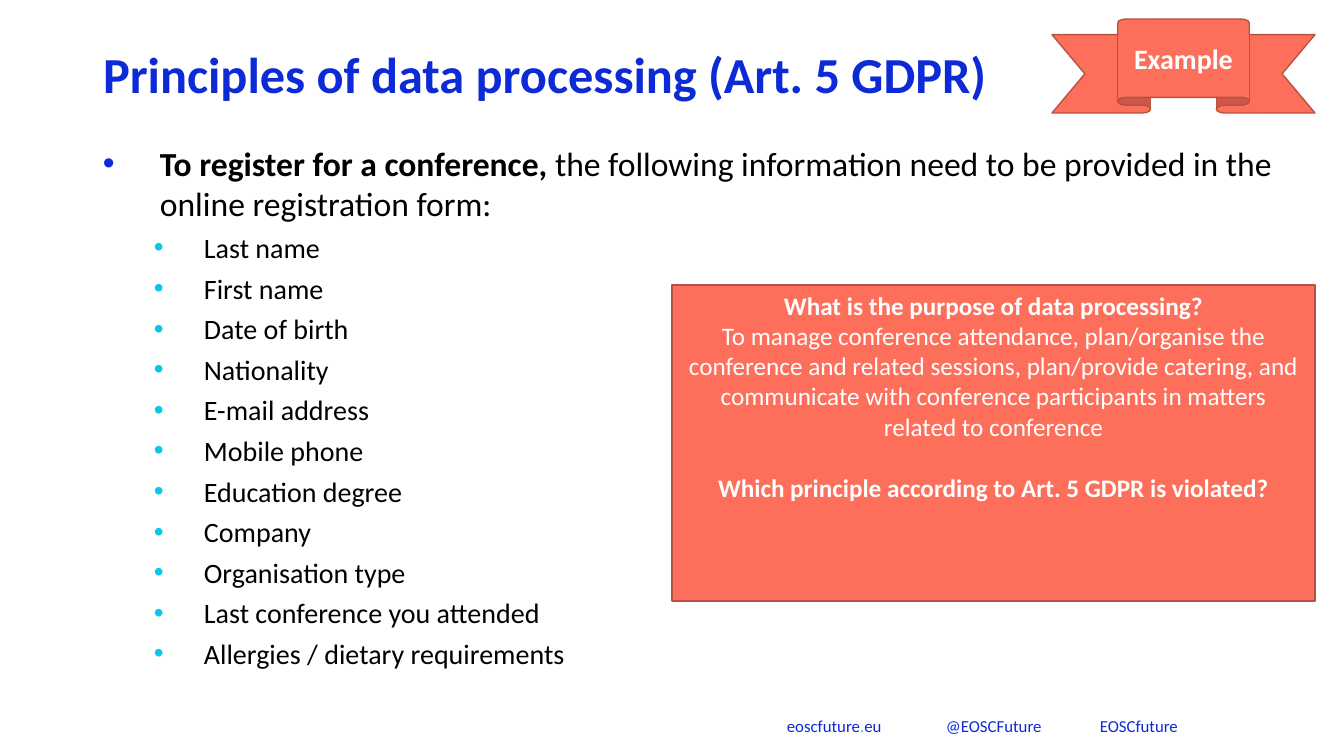
import lxml.etree
import pptx
import pptx.dml.color
import pptx.enum.shapes
import pptx.enum.text
import pptx.oxml.ns
import pptx.util

PX = 914400 / 100.8
FONT = "Calibri"
COLOURS = {"blue": "0C2AD5", "cyan": "08C8E9", "coral": "FE6F5B",
           "rust": "B95142", "white": "FFFFFF", "black": "000000"}
ALIGN = pptx.enum.text.PP_ALIGN
ANCHOR = pptx.enum.text.MSO_ANCHOR
SHAPES = pptx.enum.shapes.MSO_SHAPE

PERSONAL_DATA = ["Last name", "First name", "Date of birth", "Nationality",
                 "E-mail address", "Mobile phone", "Education degree", "Company",
                 "Organisation type", "Last conference you attended",
                 "Allergies / dietary requirements"]


def px(length):
    """Turn px into EMU."""
    return pptx.util.Emu(round(length * PX))


def rgb(name):
    """Return the named colour."""
    return pptx.dml.color.RGBColor.from_string(COLOURS[name])


def style(paragraph, size, colour, bold=None):
    """Set the font that all runs of a paragraph share."""
    font = paragraph.font
    font.name, font.size, font.bold = FONT, pptx.util.Pt(size), bold
    font.color.rgb = rgb(colour)


def add_child(parent, tag, **attributes):
    """Append a DrawingML element and return it."""
    child = lxml.etree.SubElement(parent, pptx.oxml.ns.qn(tag))
    for name, value in attributes.items():
        child.set(name, str(value))
    return child


def add_bullet(paragraph, colour, left, hanging):
    """Give a paragraph a coloured bullet and a hanging indent."""
    properties = paragraph._p.get_or_add_pPr()
    properties.set("marL", str(px(left)))
    properties.set("indent", str(-px(hanging)))
    add_child(add_child(properties, "a:buClr"), "a:srgbClr", val=COLOURS[colour])
    add_child(properties, "a:buFont", typeface="Arial")
    add_child(properties, "a:buChar", char="•")


def add_runs(paragraph, *texts):
    """Add one run per text and return the runs."""
    runs = [paragraph.add_run() for _ in texts]
    for run, text in zip(runs, texts):
        run.text = text
    return runs


def add_text_box(slide, box):
    """Add a wrapping text box and return its text frame."""
    frame = slide.shapes.add_textbox(*map(px, box)).text_frame
    frame.word_wrap = True
    return frame


def add_coral_shape(slide, kind, box, anchor):
    """Add an outlined coral shape and return its text frame."""
    shape = slide.shapes.add_shape(kind, *map(px, box))
    shape.shadow.inherit = False
    shape.fill.solid()
    shape.fill.fore_color.rgb = rgb("coral")
    shape.line.color.rgb = rgb("rust")
    shape.line.width = pptx.util.Pt(1)
    frame = shape.text_frame
    frame.word_wrap = True
    frame.vertical_anchor = anchor
    return frame


def add_footer(slide, box):
    """Place the web address and the two account names on tab stops."""
    paragraph = add_text_box(slide, box).paragraphs[0]
    tabs = add_child(paragraph._p.get_or_add_pPr(), "a:tabLst")
    for position in (159, 313):
        add_child(tabs, "a:tab", pos=px(position), algn="l")
    style(paragraph, 12, "blue")
    dot = add_runs(paragraph, "eoscfuture", ".", "eu\t@EOSCFuture\tEOSCfuture")[1]
    dot.font.color.rgb = rgb("cyan")


def add_title(slide, box):
    """Move and format the title placeholder."""
    title = slide.shapes.title
    title.left, title.top, title.width, title.height = map(px, box)
    frame = title.text_frame
    frame.text = "Principles of data processing (Art. 5 GDPR)"
    frame.auto_size = pptx.enum.text.MSO_AUTO_SIZE.NONE
    frame.vertical_anchor = ANCHOR.MIDDLE
    paragraph = frame.paragraphs[0]
    paragraph.alignment = ALIGN.LEFT
    paragraph.line_spacing = 0.9
    style(paragraph, 36, "blue", True)


def add_body(slide, box):
    """Write the lead sentence and the list of personal data."""
    frame = add_text_box(slide, box)
    lead = frame.paragraphs[0]
    add_bullet(lead, "blue", 57, 57)
    style(lead, 24, "black")
    strong = add_runs(
        lead, "To register for a conference,",
        " the following information need to be provided in the online registration form:")[0]
    strong.font.bold = True
    for item in PERSONAL_DATA:
        paragraph = frame.add_paragraph()
        paragraph.text = item
        paragraph.level = 1
        paragraph.space_before = pptx.util.Pt(5)
        add_bullet(paragraph, "cyan", 101, 50)
        style(paragraph, 20, "black")


def add_question(slide, box):
    """Add the box on purpose and violated principle."""
    frame = add_coral_shape(slide, SHAPES.RECTANGLE, box, ANCHOR.TOP)
    lines = [("What is the purpose of data processing?", True, 0),
             ("To manage conference attendance, plan/organise the conference and related "
              "sessions, plan/provide catering, and communicate with conference participants "
              "in matters related to conference", False, 0),
             ("Which principle according to Art. 5 GDPR is violated?", True, 22)]
    for index, (text, bold, space) in enumerate(lines):
        paragraph = frame.add_paragraph() if index else frame.paragraphs[0]
        paragraph.text = text
        paragraph.alignment = ALIGN.CENTER
        if space:
            paragraph.space_before = pptx.util.Pt(space)
        style(paragraph, 18, "white", bold)


def add_ribbon(slide, box):
    """Add the ribbon that marks the slide as an example."""
    frame = add_coral_shape(slide, SHAPES.UP_RIBBON, box, ANCHOR.MIDDLE)
    paragraph = frame.paragraphs[0]
    paragraph.text = "Example"
    paragraph.alignment = ALIGN.CENTER
    style(paragraph, 20, "white", True)


def main():
    """Build and save the presentation."""
    presentation = pptx.Presentation()
    presentation.slide_width, presentation.slide_height = px(1344), px(756)
    slide = presentation.slides.add_slide(presentation.slide_layouts.get_by_name("Title Only"))
    add_footer(slide, (777, 711, 424, 30))
    add_title(slide, (93, 17, 1234, 120))
    add_body(slide, (93, 138, 1234, 551))
    add_question(slide, (672, 285, 643, 316))
    add_ribbon(slide, (1052, 19, 263, 94))
    presentation.save("out.pptx")


if __name__ == "__main__":
    main()
